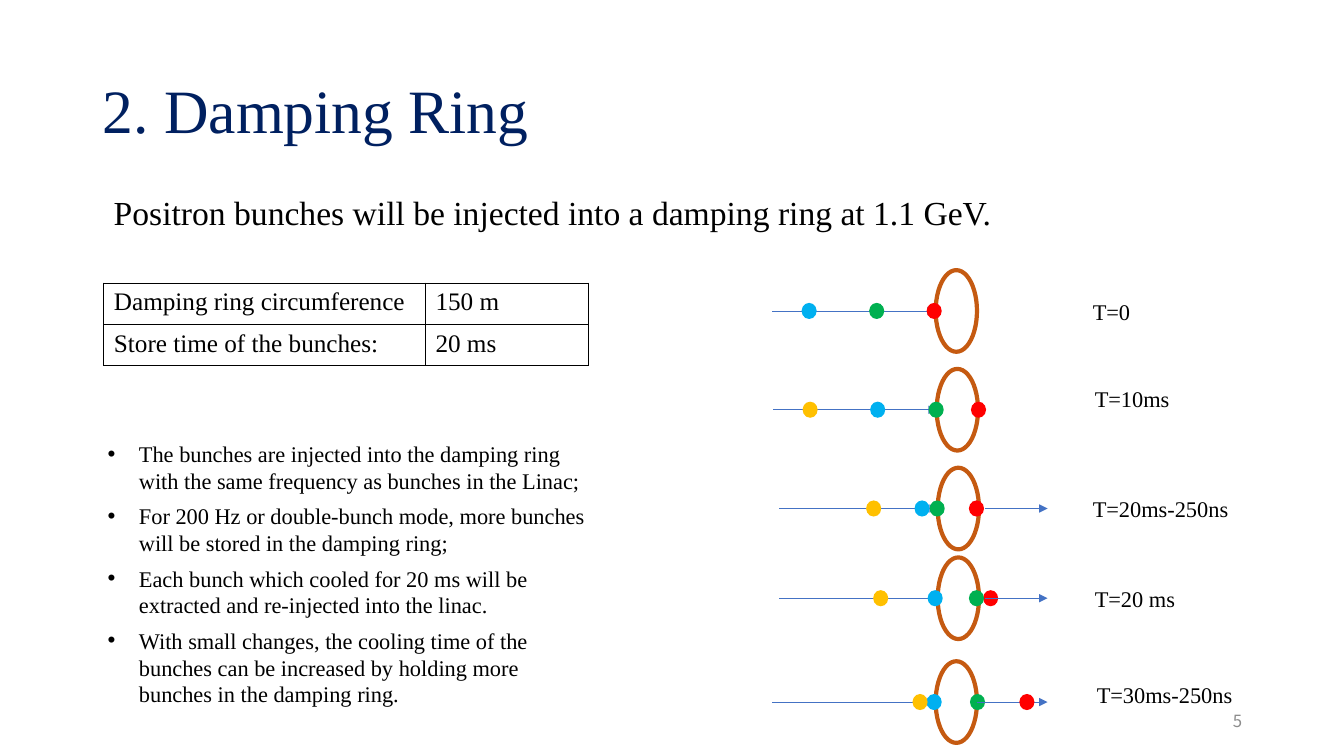
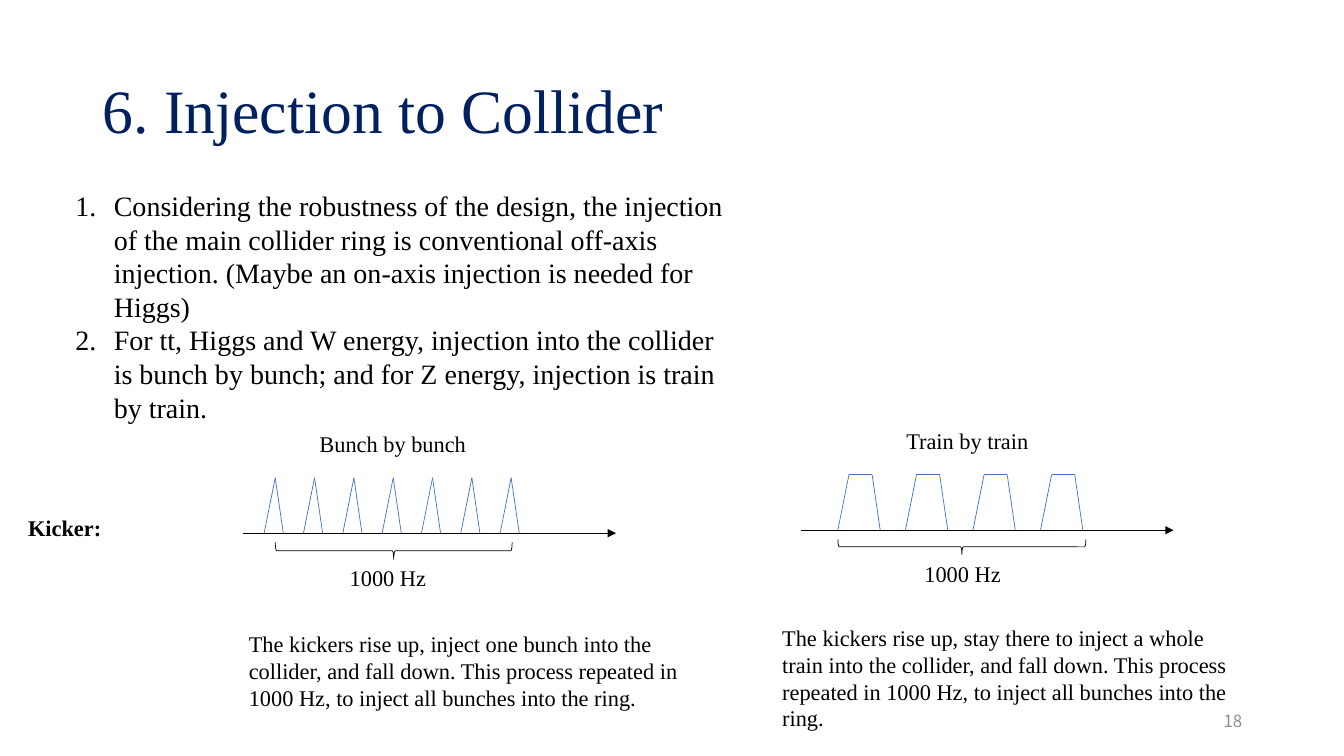
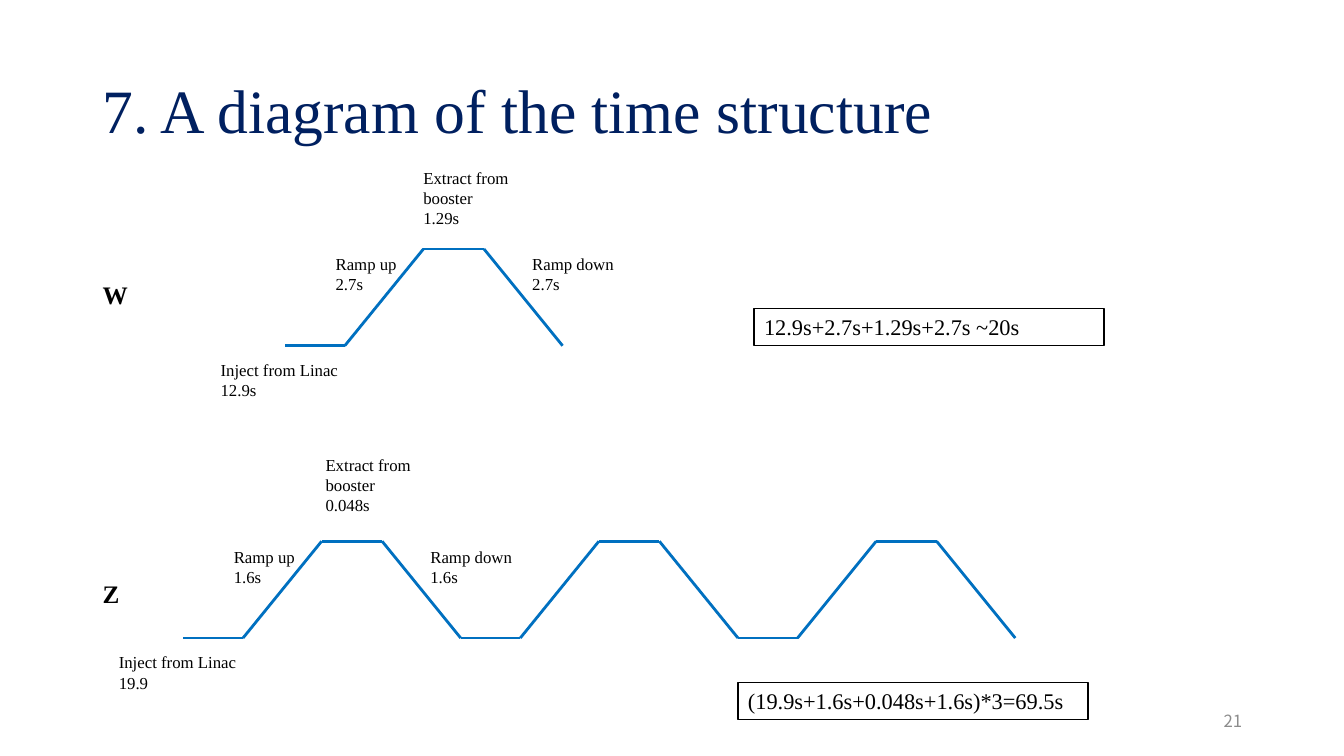
import itertools

import pptx
import pptx.dml.color
import pptx.enum.shapes
import pptx.enum.text
import pptx.oxml
import pptx.oxml.ns
import pptx.util
from pptx.util import Inches

SHAPES = pptx.enum.shapes.MSO_SHAPE
ANCHOR = pptx.enum.text.MSO_ANCHOR
ALIGN = pptx.enum.text.PP_ALIGN
FIT = pptx.enum.text.MSO_AUTO_SIZE

COLORS = {
    "title": "002060",
    "text": "000000",
    "number": "8C8C8C",
    "paper": "FFFFFF",
    "beam": "4472C4",
    "ring": "C55A11",
    "cycle": "0070C0",
    "red": "FF0000",
    "green": "00B050",
    "blue": "00B0F0",
    "yellow": "FFC000",
}
BODY_FONT = "Times New Roman"
NUMBER_FONT = "Noto Sans CJK SC"

RING_SIZE = (0.41, 0.81)
BUNCH_SIZE = (0.15, 0.16)
BEAM_END = 10.39

# ring left, ring top, beam start, bunches and exit beam from back to front
RING_STATES = [
    (9.28, 2.68, 7.66, [("red", 9.19), ("green", 8.62), ("blue", 7.95)]),
    (9.29, 3.66, 7.67,
     [("red", 9.63), ("green", 9.21), ("blue", 8.63), ("yellow", 7.96)]),
    (9.3, 4.64, 7.73,
     [("red", 9.61), ("green", 9.22), ("exit", 9.77), ("blue", 9.07),
      ("yellow", 8.59)]),
    (9.3, 5.53, 7.73,
     [("red", 9.75), ("green", 9.61), ("exit", 9.77), ("blue", 9.2),
      ("yellow", 8.66)]),
    (9.28, 6.56, 7.66,
     [("green", 9.62), ("exit", 9.69), ("blue", 9.19), ("red", 10.11),
      ("yellow", 9.05)]),
]
TIME_LABELS = [
    ("T=0", 10.74, 2.91),
    ("T=10ms", 10.76, 3.77),
    ("T=20ms-250ns", 10.74, 4.86),
    ("T=20 ms", 10.76, 5.76),
    ("T=30ms-250ns", 10.78, 6.71),
]


def rgb(name):
    return pptx.dml.color.RGBColor.from_string(COLORS[name])


def xml_child(parent, tag, body="", **attributes):
    """Append an a: element to parent."""
    listed = "".join(f' {key}="{value}"' for key, value in attributes.items())
    parent.append(pptx.oxml.parse_xml(
        f'<a:{tag} {pptx.oxml.ns.nsdecls("a")}{listed}>{body}</a:{tag}>'))


def set_list_marker(paragraph, marker, indent):
    """Hang the paragraph on a bullet, or on a number if marker is '1.'."""
    properties = paragraph._p.get_or_add_pPr()
    properties.set("marL", str(Inches(indent)))
    properties.set("indent", str(-Inches(indent)))
    if marker == "1.":
        xml_child(properties, "buFont", typeface="+mj-lt")
        xml_child(properties, "buAutoNum", type="arabicPeriod")
    else:
        xml_child(properties, "buFont", typeface="Arial")
        xml_child(properties, "buChar", char=marker)


def write_text(frame, text, size=16, font=BODY_FONT, color="text", bold=False,
               align=None, spacing=None, before=None, marker=None, indent=0):
    """Fill a text frame with one paragraph for each line of text."""
    for index, line in enumerate(text.split("\n")):
        paragraph = frame.add_paragraph() if index else frame.paragraphs[0]
        paragraph.alignment = align
        paragraph.line_spacing = spacing
        if before:
            paragraph.space_before = pptx.util.Pt(before)
        if marker:
            set_list_marker(paragraph, marker, indent)
        run = paragraph.add_run()
        run.text = line
        run.font.name = font
        run.font.size = pptx.util.Pt(size)
        run.font.bold = bold
        run.font.color.rgb = rgb(color)


def add_text(slide, text, left, top, width, height=0.37,
             anchor=ANCHOR.TOP, fit=FIT.SHAPE_TO_FIT_TEXT, **text_format):
    box = slide.shapes.add_textbox(
        Inches(left), Inches(top), Inches(width), Inches(height))
    box.text_frame.word_wrap = True
    box.text_frame.auto_size = fit
    box.text_frame.vertical_anchor = anchor
    write_text(box.text_frame, text, **text_format)
    return box


def add_line(slide, start, end, color, width=0.5, arrow=False):
    line = slide.shapes.add_connector(
        pptx.enum.shapes.MSO_CONNECTOR.STRAIGHT,
        *(Inches(value) for value in (*start, *end)))
    line.line.color.rgb = rgb(color)
    line.line.width = pptx.util.Pt(width)
    properties = line._element.spPr
    if arrow:
        xml_child(properties.get_or_add_ln(), "tailEnd", type="triangle")
    xml_child(properties, "effectLst")


def add_path(slide, points, color, width=0.5):
    for start, end in itertools.pairwise(points):
        add_line(slide, start, end, color, width)


def add_figure(slide, kind, left, top, width, height,
               fill=None, line=None, line_width=1):
    figure = slide.shapes.add_shape(
        kind, Inches(left), Inches(top), Inches(width), Inches(height))
    figure.shadow.inherit = False
    if fill:
        figure.fill.solid()
        figure.fill.fore_color.rgb = rgb(fill)
    else:
        figure.fill.background()
    if line:
        figure.line.color.rgb = rgb(line)
        figure.line.width = pptx.util.Pt(line_width)
    else:
        figure.line.fill.background()
    return figure


def add_page(deck, title, number):
    slide = deck.slides.add_slide(deck.slide_layouts[6])
    add_text(slide, title, 0.92, 0.4, 11.5, 1.45, anchor=ANCHOR.MIDDLE,
             fit=FIT.NONE, size=44, color="title", spacing=0.9)
    add_text(slide, str(number), 9.42, 6.95, 3, 0.4, anchor=ANCHOR.MIDDLE,
             fit=FIT.NONE, size=12, font=NUMBER_FONT, color="number",
             align=ALIGN.RIGHT)
    return slide


def add_parameter_table(slide, rows, left, top, column_widths, row_height):
    table = slide.shapes.add_table(
        len(rows), len(column_widths), Inches(left), Inches(top),
        Inches(sum(column_widths)), Inches(row_height * len(rows))).table
    table.first_row = table.horz_banding = False
    for column, width in zip(table.columns, column_widths):
        column.width = Inches(width)
    border = f'<a:solidFill><a:srgbClr val="{COLORS["text"]}"/></a:solidFill>'
    for row, texts in zip(table.rows, rows):
        row.height = Inches(row_height)
        for cell, text in zip(row.cells, texts):
            write_text(cell.text_frame, text, size=18)
            properties = cell._tc.get_or_add_tcPr()
            for side in ("lnL", "lnR", "lnT", "lnB"):
                xml_child(properties, side, border, w=pptx.util.Pt(1))
            cell.fill.background()


def add_ring_state(slide, left, top, beam_start, sequence):
    """Draw the ring, the beam entering it and the bunches at one moment."""
    middle = top + RING_SIZE[1] / 2
    add_figure(slide, SHAPES.OVAL, left, top, *RING_SIZE,
               line="ring", line_width=3)
    add_line(slide, (beam_start, middle), (left, middle), "beam", arrow=True)
    for name, x in sequence:
        if name == "exit":
            add_line(slide, (x, middle), (BEAM_END, middle), "beam", arrow=True)
        else:
            add_figure(slide, SHAPES.OVAL, x, middle - BUNCH_SIZE[1] / 2,
                       *BUNCH_SIZE, fill=name)


def add_pulses(slide, axis_start, base, outline, first, step, count):
    """Draw a time axis with equally spaced kicker pulses on it."""
    add_line(slide, (axis_start, base), (axis_start + 3.7, base), "text",
             arrow=True)
    for index in range(count):
        left = first + index * step
        add_path(slide, [(left + x, base - y) for x, y in outline], "beam")


def add_brace_below(slide, left, top, width, depth):
    """Draw a brace that lies flat and points down."""
    brace = add_figure(slide, SHAPES.RIGHT_BRACE,
                       left + (width - depth) / 2, top - (width - depth) / 2,
                       depth, width, line="text", line_width=0.5)
    brace.rotation = 90


def add_booster_cycles(slide, left, base, count, inject, ramp, extract,
                       extract_at):
    """Draw booster cycles and label the phases of the first one."""
    outline = [(0, 0), (0.59, 0), (1.37, 0.96), (1.97, 0.96), (2.75, 0)]
    period = outline[-1][0]
    for index in range(count):
        start = left + index * period
        add_path(slide, [(start + x, base - y) for x, y in outline], "cycle", 2)
    labels = [
        (f"Inject from Linac\n{inject}", -0.74, 0.09, 1.46, 0.5),
        (f"Ramp up\n{ramp}", 0.4, -0.96, 0.91, 0.5),
        (f"Ramp down\n{ramp}", 2.35, -0.96, 1.08, 0.5),
        (f"Extract from booster\n{extract}", *extract_at, 1.08, 0.71),
    ]
    for text, x, y, width, height in labels:
        add_text(slide, text, left + x, base + y, width, height, size=12)


def add_sum_box(slide, text, left, top):
    box = add_text(slide, text, left, top, 3.47)
    box.fill.solid()
    box.fill.fore_color.rgb = rgb("paper")
    box.line.color.rgb = rgb("text")
    box.line.width = pptx.util.Pt(1)


def build_damping_ring(deck):
    slide = add_page(deck, "2. Damping Ring", 5)
    add_text(slide,
             "Positron bunches will be injected into a damping ring at 1.1 GeV.",
             1.03, 1.85, 9.36, 0.5, size=24)
    add_parameter_table(
        slide,
        [("Damping ring circumference", "150 m"),
         ("Store time of the bunches:", "20 ms")],
        1.03, 2.81, (3.19, 1.62), 0.41)
    add_text(
        slide,
        "The bunches are injected into the damping ring with the same "
        "frequency as bunches in the Linac;\n"
        "For 200 Hz or double-bunch mode, more bunches will be stored in the "
        "damping ring;\n"
        "Each bunch which cooled for 20 ms will be extracted and re-injected "
        "into the linac.\n"
        "With small changes, the cooling time of the bunches can be increased "
        "by holding more bunches in the damping ring.",
        0.97, 4.32, 4.93, 2.78, before=6, marker="•", indent=0.31)
    for state in RING_STATES:
        add_ring_state(slide, *state)
    for text, left, top in TIME_LABELS:
        add_text(slide, text, left, top, 1.9)


def build_injection(deck):
    slide = add_page(deck, "6. Injection to Collider", 18)
    add_text(
        slide,
        "Considering the robustness of the design, the injection of the main "
        "collider ring is conventional off-axis injection. (Maybe an on-axis "
        "injection is needed for Higgs)\n"
        "For tt, Higgs and W energy, injection into the collider is bunch by "
        "bunch; and for Z energy, injection is train by train.",
        0.65, 1.82, 6.65, 2.46, size=20, marker="1.", indent=0.38)
    add_text(slide, "Kicker:", 0.18, 5.05, 1.98, bold=True)

    add_text(slide, "Bunch by bunch", 3.07, 4.22, 1.98)
    spike = [(0, 0), (0.11, 0.55), (0.19, 0)]
    add_pulses(slide, 2.41, 5.29, spike, first=2.62, step=0.39, count=7)
    add_brace_below(slide, 2.73, 5.38, 2.35, 0.17)
    add_text(slide, "1000 Hz", 3.37, 5.55, 1.4)
    add_text(slide,
             "The kickers rise up, inject one bunch into the collider, and fall "
             "down. This process repeated in 1000 Hz, to inject all bunches "
             "into the ring.", 2.37, 6.2, 4.7, 0.91)

    add_text(slide, "Train by train", 8.89, 4.19, 1.98)
    plateau = [(0, 0), (0.11, 0.55), (0.34, 0.55), (0.42, 0)]
    add_pulses(slide, 7.94, 5.26, plateau, first=8.31, step=0.67, count=4)
    add_brace_below(slide, 8.31, 5.35, 2.46, 0.15)
    add_text(slide, "1000 Hz", 9.07, 5.51, 1.4)
    add_text(slide,
             "The kickers rise up, stay there to inject a whole train into the "
             "collider, and fall down. This process repeated in 1000 Hz, to "
             "inject all bunches into the ring.", 7.66, 6.14, 4.7, 1.18)


def build_time_structure(deck):
    slide = add_page(deck, "7. A diagram of the time structure", 21)
    add_text(slide, "W", 0.92, 2.72, 0.73, 0.4, size=18, bold=True)
    add_booster_cycles(slide, 2.83, 3.43, 1, "12.9s", "2.7s", "1.29s",
                       extract_at=(1.27, -1.82))
    add_sum_box(slide, "12.9s+2.7s+1.29s+2.7s ~20s", 7.48, 3.06)

    add_text(slide, "Z", 0.92, 5.69, 0.91, 0.4, size=18, bold=True)
    add_booster_cycles(slide, 1.82, 6.33, 3, "19.9", "1.6s", "0.048s",
                       extract_at=(1.31, -1.87))
    add_sum_box(slide, "(19.9s+1.6s+0.048s+1.6s)*3=69.5s", 7.32, 6.77)


def main():
    deck = pptx.Presentation()
    deck.slide_width = Inches(13.33)
    deck.slide_height = Inches(7.5)
    build_damping_ring(deck)
    build_injection(deck)
    build_time_structure(deck)
    deck.save("out.pptx")


if __name__ == "__main__":
    main()
